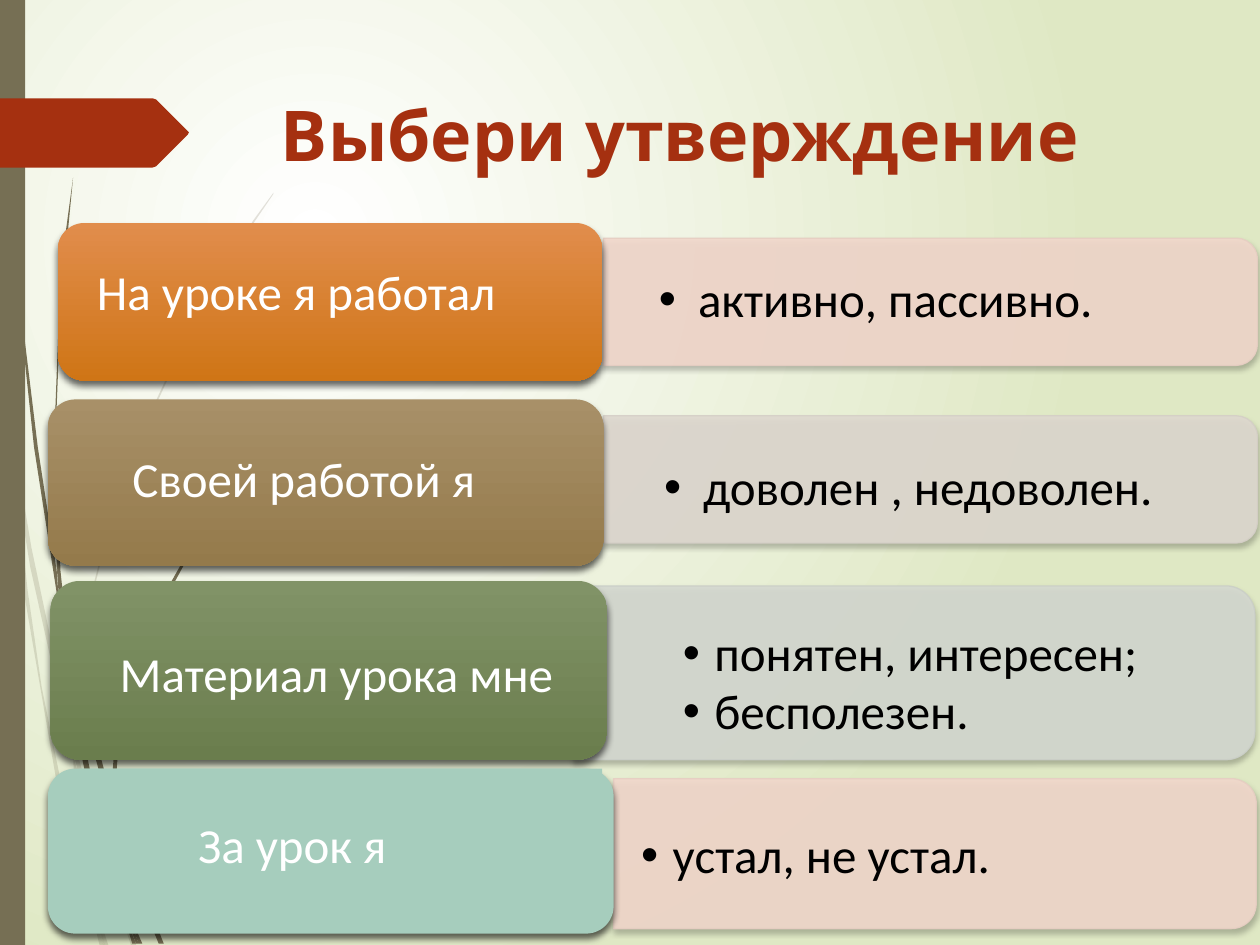
"""Builds a lesson reflection slide: four statements, each with answers to choose from."""
from lxml.etree import SubElement
from pptx import Presentation
from pptx.dml.color import RGBColor
from pptx.enum.shapes import MSO_SHAPE
from pptx.enum.text import MSO_ANCHOR, PP_ALIGN
from pptx.oxml.ns import qn
from pptx.util import Emu, Pt

TITLE = "Выбери утверждение"
ROWS = [
    {"label": "На уроке я работал", "card": (46, 177, 432, 125), "words": (27, 181, 416, 106),
     "tint": ("E18D4C", "CF7516"), "answers": ["активно, пассивно."],
     "panel": (479, 189, 519, 101), "list": (501, 179, 471, 121), "pad": 22, "hang": 31,
     "fill": "F2D8CC", "edge": "E7CEC3"},
    {"label": "Своей работой я", "card": (38, 317, 441, 132), "words": (28, 317, 426, 130),
     "tint": ("A89068", "947A4B"), "answers": ["доволен , недоволен."],
     "panel": (479, 330, 519, 101), "list": (505, 352, 468, 73), "pad": 22, "hang": 31,
     "fill": "DFD9D0", "edge": "D5CFC7"},
    {"label": "Материал урока мне", "card": (40, 461, 442, 142), "words": (55, 473, 424, 128),
     "tint": ("819367", "6A7D4D"), "answers": ["понятен, интересен;", "бесполезен."],
     "panel": (455, 465, 541, 138), "list": (523, 493, 417, 101), "pad": 19, "hang": 25,
     "fill": "D5D9D1", "edge": "CBCFC8"},
    {"label": "За урок я", "card": (38, 610, 449, 131), "words": (67, 646, 330, 53),
     "tint": ("A6CDBD",), "patch": (63, 610, 415, 118), "answers": ["устал, не устал."],
     "panel": (487, 618, 510, 119), "list": (499, 654, 418, 53), "pad": 10, "hang": 25,
     "fill": "F2D8CC", "edge": "E7CEC3"},
]
PALE = [
    [(8, 350), (6, 322), (0, 282), (0, 299), (7, 344)],
    [(40, 522), (59, 599), (59, 586), (43, 520), (25, 435), (10, 345), (12, 376), (24, 450)],
    [(64, 607), (61, 596), (61, 610), (85, 694), (104, 750), (108, 750), (88, 692)],
    [(83, 750), (86, 750), (73, 711)],
    [(64, 683), (48, 619), (33, 545), (22, 469), (12, 376), (8, 350), (19, 470), (45, 621),
     (64, 693), (70, 714), (69, 707)],
    [(58, 599), (60, 646), (64, 683), (67, 692), (73, 711), (63, 646), (61, 610)],
    [(61, 584), (65, 522), (76, 462), (91, 403), (111, 349), (159, 245), (187, 198), (217, 154),
     (217, 153), (201, 175), (158, 244), (110, 348), (90, 402), (75, 461), (64, 521), (59, 586),
     (61, 596)],
    [(70, 714), (79, 750), (82, 750)],
    [(61, 608), (61, 596), (59, 586), (58, 599)],
    [(67, 692), (65, 683), (69, 707), (82, 750), (83, 750), (73, 711)],
]
DARK = [
    [(5, 110), (14, 233), (27, 355), (46, 477), (47, 481), (45, 453), (30, 355), (15, 232),
     (6, 109), (3, 0), (2, 0)],
    [(73, 592), (88, 645), (88, 631), (77, 590), (62, 532), (50, 472), (53, 505)],
    [(94, 649), (91, 641), (91, 656), (109, 708), (126, 749), (130, 749), (113, 706)],
    [(91, 691), (81, 657), (60, 556), (53, 505), (47, 477), (56, 557), (77, 659), (92, 708),
     (97, 722), (96, 717)],
    [(50, 472), (48, 453), (44, 349), (48, 245), (58, 141), (51, 193), (47, 245), (43, 349),
     (45, 449), (49, 472)],
    [(110, 749), (113, 749), (100, 719)],
    [(47, 477), (53, 505), (50, 472), (45, 449)],
    [(91, 633), (94, 592), (103, 552), (131, 476), (169, 406), (191, 374), (216, 344), (215, 344),
     (191, 373), (168, 405), (129, 474), (101, 551), (91, 591), (88, 631), (91, 641)],
    [(97, 722), (105, 749), (108, 749)],
    [(96, 706), (91, 691), (96, 717), (108, 749), (110, 749), (100, 719)],
]
ARROW = [(0, 78), (121, 78), (124, 79), (149, 104), (150, 105), (149, 107), (124, 132),
         (121, 133), (0, 133)]
THEME = {"olive": "766F54", "red": "A53010", "glow": ("FFFFFF", "DFE8C4"), "light": "FFFFFF",
         "ink": "000000", "head": ("League Spartan", 40), "body": ("Calibri", 28)}
COLS, LINES, UNIT = 1000, 750, 9144


def rgb(code):
    return RGBColor.from_string(code)


def span(box):
    return [Emu(n * UNIT) for n in box]


def put(item, **vals):
    for key, val in vals.items():
        setattr(item, key, val)


def fade(shape, share):
    for code in shape._element.spPr.iter(qn("a:srgbClr")):
        SubElement(code, qn("a:alpha"), val=str(share * 1000))


def blend(fill, tints):
    fill.gradient()
    for stop, tint, place in zip(fill.gradient_stops, tints, (0, 1)):
        stop.position = place
        stop.color.rgb = rgb(tint)


def shade(shape, share, blur, dist):
    effect = shape._element.spPr.find(qn("a:effectLst"))
    cast = SubElement(effect, qn("a:outerShdw"), blurRad=str(Pt(blur)), dist=str(Pt(dist)),
                      dir="5400000", algn="ctr", rotWithShape="0")
    code = SubElement(cast, qn("a:srgbClr"), val=THEME["ink"])
    SubElement(code, qn("a:alpha"), val=str(share * 1000))


def paint(shape, tints, edge=None):
    shape.shadow.inherit = False
    if len(tints) > 1:
        blend(shape.fill, tints)
        shape.fill.gradient_angle = 270
    else:
        shape.fill.solid()
        shape.fill.fore_color.rgb = rgb(tints[0])
    if edge:
        shape.line.color.rgb = rgb(edge)
        shape.line.width = Pt(0.75)
    else:
        shape.line.fill.background()
    return shape


def block(shapes, kind, box, tints):
    return paint(shapes.add_shape(kind, *span(box)), tints)


def trace(shapes, points, tint):
    pen = shapes.build_freeform(*points[0], scale=UNIT)
    pen.add_line_segments(points[1:], close=True)
    return paint(pen.convert_to_shape(), [tint])


def style(para, face, tint, bold=False):
    name, size = face
    put(para.font, name=name, size=Pt(size), bold=bold)
    para.font.color.rgb = rgb(tint)


def write(shapes, box, texts, pad, tint, hang=0):
    frame = shapes.add_textbox(*span(box)).text_frame
    gap = Emu(pad * UNIT)
    put(frame, word_wrap=True, vertical_anchor=MSO_ANCHOR.MIDDLE, margin_left=gap,
        margin_right=gap, margin_top=0, margin_bottom=0)
    for i, text in enumerate(texts):
        para = frame.add_paragraph() if i else frame.paragraphs[0]
        para.text = text
        put(para, line_spacing=0.9, space_after=Pt(3),
            alignment=PP_ALIGN.LEFT if hang else PP_ALIGN.CENTER)
        if hang:
            props = para._p.get_or_add_pPr()
            props.set("marL", str(hang * UNIT))
            props.set("indent", str(-hang * UNIT))
            SubElement(props, qn("a:buFont"), typeface="Arial")
            SubElement(props, qn("a:buChar"), char="•")
        style(para, THEME["body"], tint)


def glow(slide):
    blend(slide.background.fill, THEME["glow"])
    grad = slide._element.find(".//" + qn("a:gradFill"))
    grad.remove(grad.find(qn("a:lin")))
    ring = SubElement(grad, qn("a:path"), path="circle")
    SubElement(ring, qn("a:fillToRect"), l="50000", t="50000", r="100000", b="100000")


def draw_row(shapes, row):
    panel = shapes.add_shape(MSO_SHAPE.ROUND_2_SAME_RECTANGLE, 0, 0, 0, 0)
    left, top, wide, high = row["panel"]
    turned = span((left + (wide - high) / 2, top + (high - wide) / 2, high, wide))
    put(panel, **dict(zip(("left", "top", "width", "height"), turned)), rotation=90)
    paint(panel, [row["fill"]], row["edge"])
    fade(panel, 90)
    shade(panel, 25, 3, 2)
    card = block(shapes, MSO_SHAPE.ROUNDED_RECTANGLE, row["card"], row["tint"])
    shade(card, 60, 4, 3)
    if "patch" in row:
        block(shapes, MSO_SHAPE.RECTANGLE, row["patch"], row["tint"])
    write(shapes, row["words"], [row["label"]], 10, THEME["light"])
    write(shapes, row["list"], row["answers"], row["pad"], THEME["ink"], row["hang"])


def main():
    deck = Presentation()
    put(deck, slide_width=Emu(COLS * UNIT), slide_height=Emu(LINES * UNIT))
    slide = deck.slides.add_slide(deck.slide_layouts[5])
    shapes = slide.shapes
    glow(slide)
    for points in PALE:
        fade(trace(shapes, points, THEME["olive"]), 20)
    for points in DARK:
        trace(shapes, points, THEME["olive"])
    block(shapes, MSO_SHAPE.RECTANGLE, (0, 0, 20, LINES), [THEME["olive"]])
    trace(shapes, ARROW, THEME["red"])
    title = shapes.title
    put(title, **dict(zip(("left", "top", "width", "height"), span((213, 68, 721, 140)))))
    title.text_frame.text = TITLE
    put(title.text_frame, vertical_anchor=MSO_ANCHOR.TOP, word_wrap=True)
    para = title.text_frame.paragraphs[0]
    para.alignment = PP_ALIGN.LEFT
    style(para, THEME["head"], THEME["red"], True)
    for row in ROWS:
        draw_row(shapes, row)
    deck.save("out.pptx")


if __name__ == "__main__":
    main()
